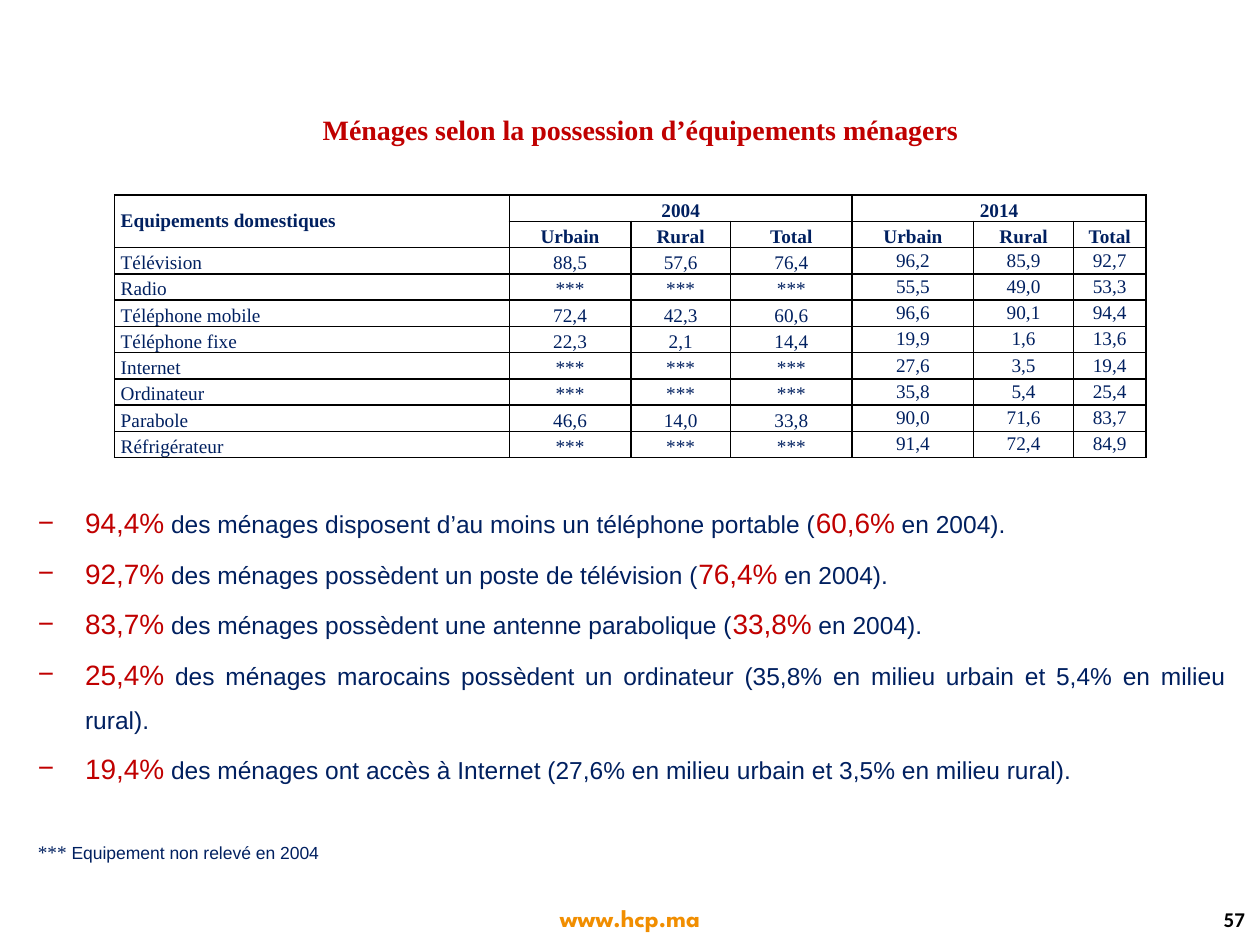
from lxml import etree
from pptx import Presentation
from pptx.dml.color import RGBColor
from pptx.enum import text as t
from pptx.oxml import ns
from pptx.util import Pt

NAVY, RED, ORANGE, BLACK = "002060", "C00000", "F18E00", "000000"
SERIF, SANS = "Times New Roman", "Arial"
LEFT, CENTER = t.PP_ALIGN.LEFT, t.PP_ALIGN.CENTER
RIGHT, JUSTIFY = t.PP_ALIGN.RIGHT, t.PP_ALIGN.JUSTIFY
TOP, MIDDLE, BOTTOM = t.MSO_ANCHOR.TOP, t.MSO_ANCHOR.MIDDLE, t.MSO_ANCHOR.BOTTOM

COLUMN_WIDTHS = [225.5, 69.5, 57, 69.5, 69.5, 57, 41.5]
ROW_HEIGHT = 15
EQUIPMENT = [
    ["Télévision", "88,5", "57,6", "76,4", "96,2", "85,9", "92,7"],
    ["Radio", "***", "***", "***", "55,5", "49,0", "53,3"],
    ["Téléphone mobile", "72,4", "42,3", "60,6", "96,6", "90,1", "94,4"],
    ["Téléphone fixe", "22,3", "2,1", "14,4", "19,9", "1,6", "13,6"],
    ["Internet", "***", "***", "***", "27,6", "3,5", "19,4"],
    ["Ordinateur", "***", "***", "***", "35,8", "5,4", "25,4"],
    ["Parabole", "46,6", "14,0", "33,8", "90,0", "71,6", "83,7"],
    ["Réfrigérateur", "***", "***", "***", "91,4", "72,4", "84,9"],
]
FINDINGS = [
    ["94,4%", " des ménages disposent d’au moins un téléphone portable (", "60,6%", " en 2004)."],
    ["92,7%", " des ménages possèdent un poste de télévision (", "76,4%", " en 2004)."],
    ["83,7%", " des ménages possèdent une antenne parabolique (", "33,8%", " en 2004)."],
    ["25,4%", " des ménages marocains possèdent un ordinateur "
              "(35,8% en milieu urbain et 5,4% en milieu rural)."],
    ["19,4%", " des ménages ont accès à Internet (27,6% en milieu urbain et 3,5% en milieu rural)."],
]


def rgb(color):
    return RGBColor.from_string(color)


def style(font, name, size, color, bold=False):
    font.name, font.size, font.bold = name, Pt(size), bold
    font.color.rgb = rgb(color)


def add_run(paragraph, words, name, size, color):
    run = paragraph.add_run()
    run.text = words
    style(run.font, name, size, color)


def place_title(slide, left, top, width, height):
    title = slide.shapes.title
    title.left, title.top, title.width, title.height = map(Pt, (left, top, width, height))
    frame = title.text_frame
    frame.text = "Ménages selon la possession d’équipements ménagers"
    frame.auto_size = t.MSO_AUTO_SIZE.NONE
    frame.vertical_anchor = TOP
    heading = frame.paragraphs[0]
    heading.alignment = CENTER
    style(heading.runs[0].font, SERIF, 16, RED, True)


def add_borders(cell):
    properties = cell._tc.get_or_add_tcPr()
    for position, side in enumerate(("lnL", "lnR", "lnT", "lnB")):
        line = etree.Element(ns.qn("a:" + side), w=str(Pt(1)))
        fill = etree.SubElement(line, ns.qn("a:solidFill"))
        etree.SubElement(fill, ns.qn("a:srgbClr"), val=BLACK)
        properties.insert(position, line)


def fill_cell(cell, words, alignment, anchor, bold):
    cell.text = words
    cell.vertical_anchor = anchor
    cell.margin_left = cell.margin_right = Pt(3.5)
    cell.margin_top = cell.margin_bottom = 0
    paragraph = cell.text_frame.paragraphs[0]
    paragraph.alignment = alignment
    paragraph.line_spacing = 0.99
    style(paragraph.font, SERIF, 11, NAVY, bold)
    for run in paragraph.runs:
        style(run.font, SERIF, 11, NAVY, bold)
    cell.fill.background()
    add_borders(cell)


def place_equipment_table(slide, left, top):
    areas = ["Urbain", "Rural", "Total"]
    rows = [["Equipements domestiques", "2004", "", "", "2014", "", ""],
            ["", *areas, *areas], *EQUIPMENT]
    frame = slide.shapes.add_table(len(rows), len(COLUMN_WIDTHS), Pt(left), Pt(top),
                                   Pt(sum(COLUMN_WIDTHS)), Pt(ROW_HEIGHT * len(rows)))
    table = frame.table
    table.first_row = table.horz_banding = False
    for column, width in zip(table.columns, COLUMN_WIDTHS):
        column.width = Pt(width)
    for r, values in enumerate(rows):
        table.rows[r].height = Pt(ROW_HEIGHT)
        is_header = r < 2
        for c, words in enumerate(values):
            centred = (c == 0) if is_header else (c > 3)
            fill_cell(table.cell(r, c), words, CENTER if c else LEFT,
                      MIDDLE if centred else BOTTOM, is_header)
    table.cell(0, 0).merge(table.cell(1, 0))
    for first in (1, 4):
        table.cell(0, first).merge(table.cell(0, first + 2))


def add_dash(paragraph, indent):
    properties = paragraph._p.get_or_add_pPr()
    properties.set("marL", str(Pt(indent)))
    properties.set("indent", str(-Pt(indent)))
    etree.SubElement(properties, ns.qn("a:buFont"), typeface=SANS)
    etree.SubElement(properties, ns.qn("a:buChar"), char="−")


def place_findings(slide, left, top, width, height):
    frame = slide.shapes.add_textbox(Pt(left), Pt(top), Pt(width), Pt(height)).text_frame
    frame.word_wrap = True
    for i, parts in enumerate(FINDINGS):
        finding = frame.add_paragraph() if i else frame.paragraphs[0]
        finding.alignment, finding.line_spacing = JUSTIFY, 1.5
        add_dash(finding, 27)
        for j, words in enumerate(parts):
            size, color = (14, NAVY) if j % 2 else (16, RED)
            add_run(finding, words, SANS, size, color)
    footnote = frame.add_paragraph()
    footnote.alignment, footnote.line_spacing = JUSTIFY, 1.5
    footnote.space_before = Pt(25)
    add_run(footnote, "***", SERIF, 11, NAVY)
    add_run(footnote, " Equipement non relevé en 2004", SANS, 10, NAVY)


def place_footer_text(slide, left, top, width, height, words, alignment, anchor, font):
    frame = slide.shapes.add_textbox(Pt(left), Pt(top), Pt(width), Pt(height)).text_frame
    frame.word_wrap = True
    frame.vertical_anchor = anchor
    frame.text = words
    frame.paragraphs[0].alignment = alignment
    style(frame.paragraphs[0].runs[0].font, *font, True)


def main():
    deck = Presentation()
    deck.slide_width, deck.slide_height = Pt(720), Pt(540)
    slide = deck.slides.add_slide(deck.slide_layouts[5])
    place_footer_text(slide, 275, 512.5, 170, 24, "www.hcp.ma", CENTER, TOP,
                      ("League Spartan", 14, ORANGE))
    place_footer_text(slide, 609, 512.5, 109.5, 25, "57", RIGHT, MIDDLE,
                      ("Calibri", 12, BLACK))
    place_title(slide, 88, 60.5, 556, 26.5)
    place_equipment_table(slide, 65.5, 111.5)
    place_findings(slide, 14.5, 276, 693.5, 231)
    deck.save("out.pptx")


if __name__ == "__main__":
    main()
